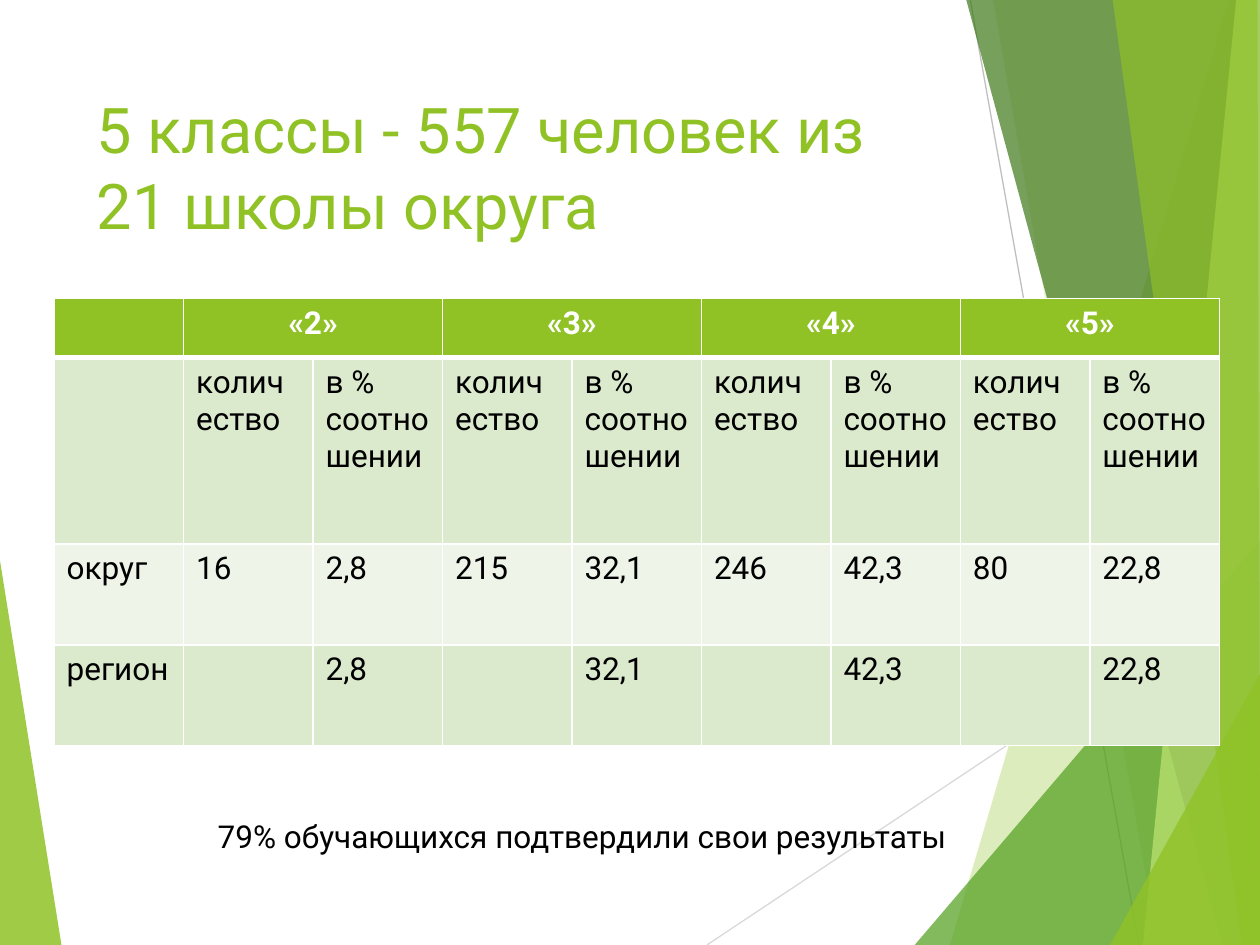
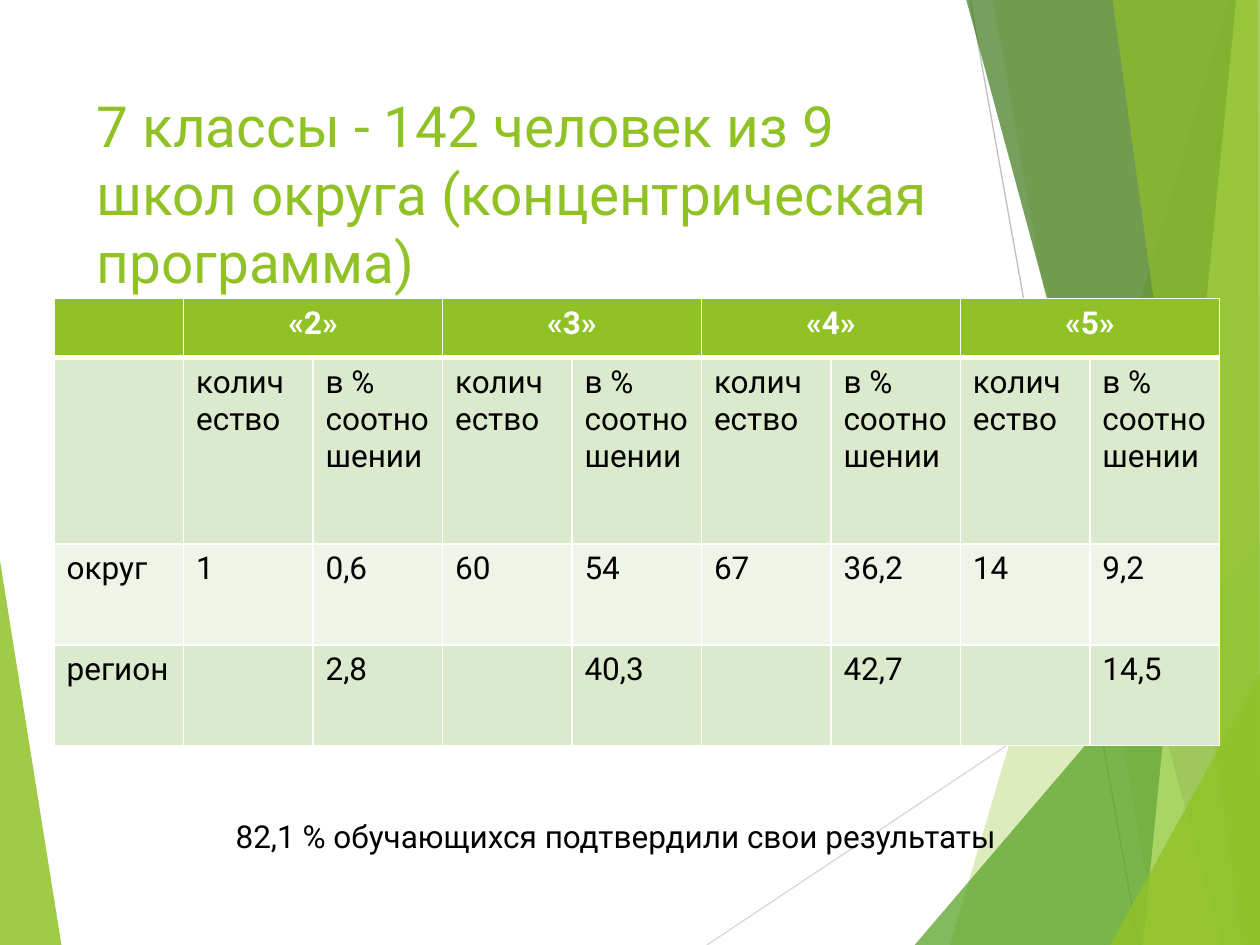
from pptx import Presentation
from pptx.util import Cm, Pt
from pptx.dml.color import RGBColor
from pptx.enum.shapes import MSO_CONNECTOR
from pptx.enum.text import PP_ALIGN
from pptx.oxml.ns import qn
from lxml.etree import SubElement, Element

FONT = "Roboto"
GREEN, WHITE, BLACK = "90C226", "FFFFFF", "000000"
PALE, LIGHT = "DBE9CD", "EEF4E8"
WIDE, HIGH = 25.4, 19.05
CORNER = (WIDE, HIGH)


def paint(part, color):
    if hasattr(part, "solid"):
        part.solid()
        part.fore_color.rgb = RGBColor.from_string(color)
    else:
        part.rgb = RGBColor.from_string(color)


def write(frame, text, size, color, bold=False):
    frame.word_wrap = True
    line = frame.paragraphs[0]
    run = line.add_run()
    run.text = text
    run.font.name = FONT
    run.font.size = Pt(size)
    run.font.bold = bold
    paint(run.font.color, color)
    return line


rays = [
    ((14.25, HIGH), (WIDE, 11.63), "D9D9D9"),
    ((19.56, 0), (22.96, HIGH), "BFBFBF"),
]
facets = [
    (GREEN, 85, [(0, 11.3), (1.24, HIGH), (0, HIGH)]),
    (GREEN, 30, [(24.77, 0), (19.15, HIGH), CORNER, (WIDE, 0)]),
    (GREEN, 20, [(20.02, 0), (23.34, HIGH), CORNER, (WIDE, 0)]),
    ("54A021", 72, [(18.44, HIGH), (WIDE, 10.9), CORNER]),
    ("3F7819", 70, [(19.48, 0), (24.64, HIGH), CORNER, (WIDE, 0)]),
    ("C0E474", 70, [(24.92, 0), (23.04, HIGH), CORNER, (WIDE, 0)]),
    (GREEN, 65, [(22.43, 0), (25.04, HIGH), CORNER, (25.35, 0)]),
    (GREEN, 80, [(22.38, HIGH), (WIDE, 13.59), CORNER]),
]

marks = ["«2»", "«3»", "«4»", "«5»"]
heads = [""] + ["количество", "в % соотношении"] * len(marks)
tall = [1.19, 3.76, 2.03, 2.03]
bands = [GREEN, PALE, LIGHT, PALE]

pages = [
    {
        "title": "5 классы - 557 человек из 21 школы округа",
        "size": 36,
        "local": ["16", "2,8", "215", "32,1", "246", "42,3", "80", "22,8"],
        "region": ["", "2,8", "", "32,1", "", "42,3", "", "22,8"],
        "note": "79% обучающихся подтвердили свои результаты",
        "left": 4.14,
        "width": 16.61,
    },
    {
        "title": "7 классы - 142 человек из 9 школ округа (концентрическая программа)",
        "size": 32.4,
        "local": ["1", "0,6", "60", "54", "67", "36,2", "14", "9,2"],
        "region": ["", "2,8", "", "40,3", "", "42,7", "", "14,5"],
        "note": "82,1 % обучающихся подтвердили свои результаты",
        "left": 4.5,
        "width": 17.7,
    },
]

deck = Presentation()
deck.slide_width, deck.slide_height = Cm(WIDE), Cm(HIGH)

for page in pages:
    slide = deck.slides.add_slide(deck.slide_layouts[6])
    shapes = slide.shapes
    paint(slide.background.fill, WHITE)

    for start, end, color in rays:
        ray = shapes.add_connector(
            MSO_CONNECTOR.STRAIGHT, *map(Cm, start), *map(Cm, end))
        paint(ray.line.fill, color)
        ray.line.width = Pt(0.75)
        SubElement(ray._element.spPr, qn("a:effectLst"))

    for color, alpha, spots in facets:
        spots = [(Cm(x), Cm(y)) for x, y in spots]
        pen = shapes.build_freeform(*spots[0])
        pen.add_line_segments(spots[1:])
        facet = pen.convert_to_shape()
        facet.shadow.inherit = False
        facet.line.fill.background()
        paint(facet.fill, color)
        tone = facet._element.spPr.find(qn("a:solidFill"))[0]
        SubElement(tone, qn("a:alpha"), val=str(alpha * 1000))

    title = shapes.add_textbox(Cm(1.7), Cm(1.7), Cm(17.63), Cm(3.66))
    write(title.text_frame, page["title"], page["size"], GREEN)

    rows = [
        [""] + [text for mark in marks for text in (mark, "")],
        heads,
        ["округ"] + page["local"],
        ["регион"] + page["region"],
    ]
    table = shapes.add_table(
        len(rows), len(heads), Cm(1.09), Cm(6.02),
        Cm(2.61 * len(heads)), Cm(sum(tall))).table
    for col in table.columns:
        col.width = Cm(2.61)
    for y, row in enumerate(rows):
        table.rows[y].height = Cm(tall[y])
        for x, text in enumerate(row):
            cell = table.cell(y, x)
            paint(cell.fill, bands[y])
            props = cell._tc.get_or_add_tcPr()
            for n, side in enumerate(["lnL", "lnR", "lnT", "lnB"]):
                thick = (y, side) in [(0, "lnB"), (1, "lnT")]
                edge = Element(qn("a:" + side), w=str(Pt(3 if thick else 1)))
                fill = SubElement(edge, qn("a:solidFill"))
                SubElement(fill, qn("a:srgbClr"), val=WHITE)
                props.insert(n, edge)
            if text:
                top = y == 0
                line = write(cell.text_frame, text, 18,
                             WHITE if top else BLACK, top)
                if top:
                    line.alignment = PP_ALIGN.CENTER
    for x in range(1, len(heads), 2):
        table.cell(0, x).merge(table.cell(0, x + 1))

    note = shapes.add_textbox(
        Cm(page["left"]), Cm(16.34), Cm(page["width"]), Cm(1.57))
    write(note.text_frame, page["note"], 18, BLACK)

deck.save("out.pptx")
